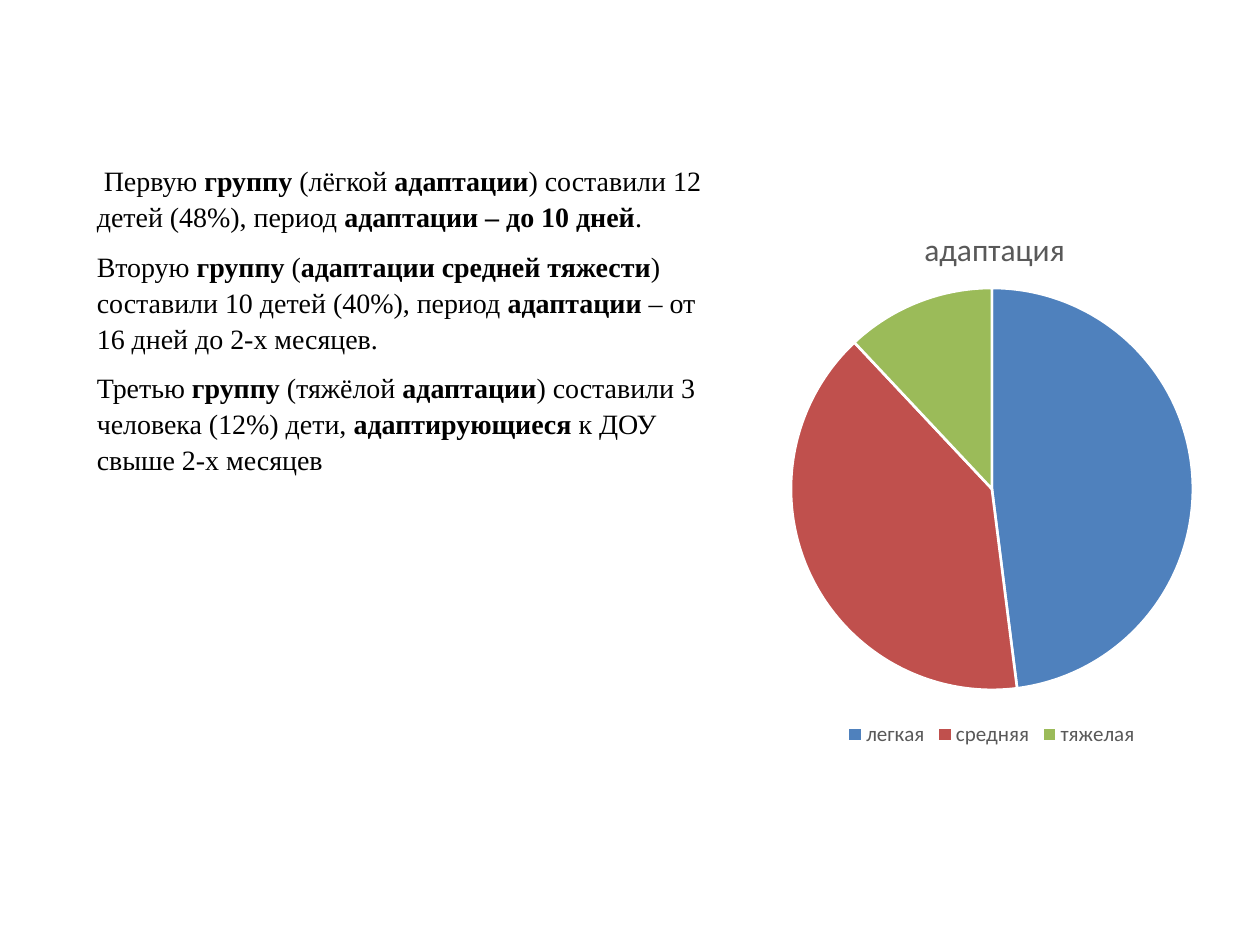
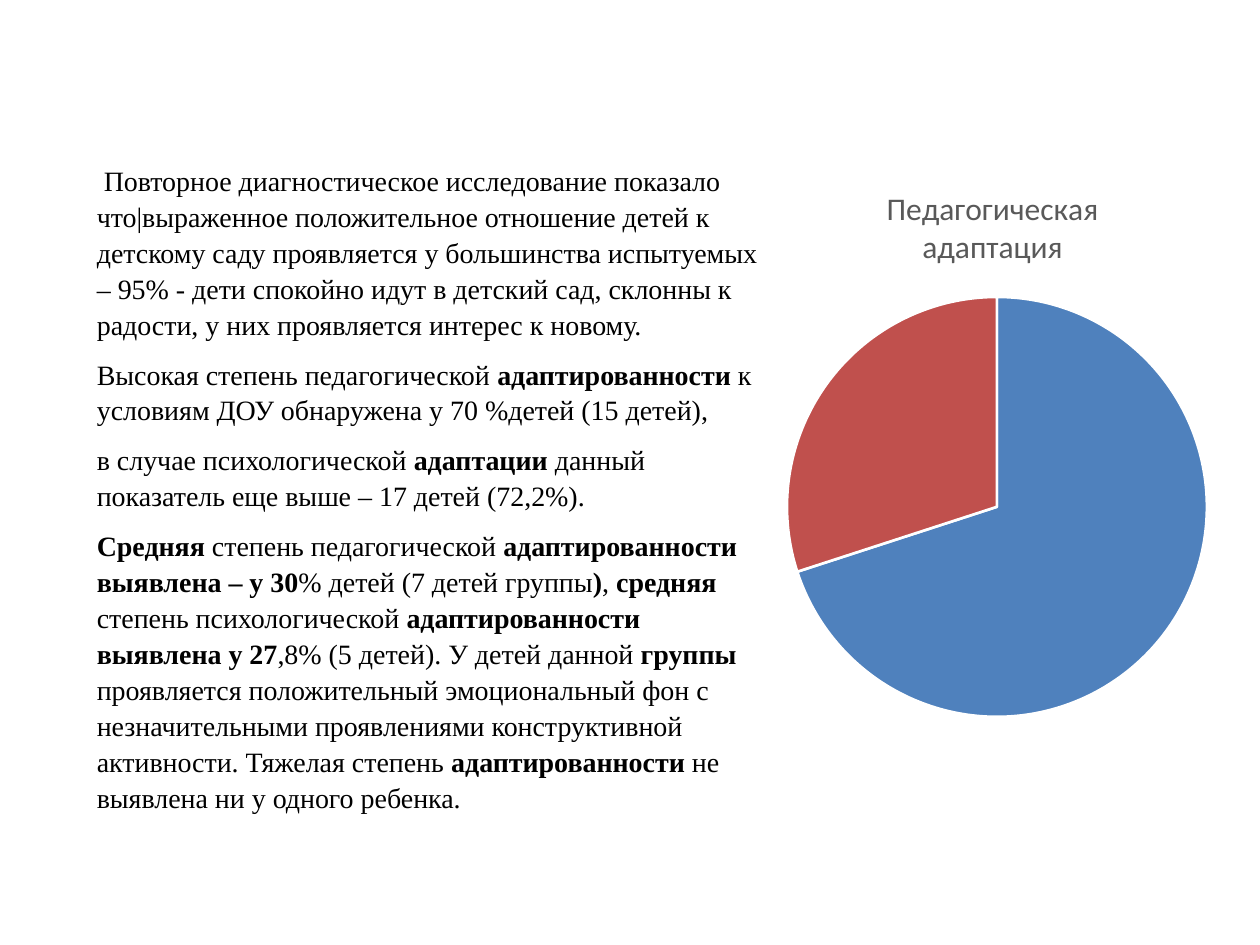
"""Build two slides on how children adapt to kindergarten, each with text and a pie chart."""
from lxml import etree
from pptx import Presentation
from pptx import util as u
from pptx.chart.data import CategoryChartData
from pptx.dml.color import RGBColor
from pptx.enum import chart as charts, text
from pptx.oxml.ns import qn


def colour(hex_value):
    return RGBColor.from_string(hex_value)


class Deck:
    BODY_FONT = "Times New Roman"
    CHART_FONT = "Calibri"
    BLACK, GREY, WHITE = "000000", "595959", "FFFFFF"
    SLICES = ("4F81BD", "C0504D", "9BBB59")
    LEFT, TOP = 48.24, 88.56
    CHART_LEFT = 439.2

    def __init__(self):
        self.presentation = Presentation()
        self.presentation.slide_width = u.Pt(720)
        self.presentation.slide_height = u.Pt(540)
        self.slide = None

    def add_slide(self):
        self.slide = self.presentation.slides.add_slide(self.presentation.slide_layouts[6])

    def font(self, font, name, size, hex_value, bold=False):
        font.name, font.size, font.bold = name, u.Pt(size), bold
        font.color.rgb = colour(hex_value)

    def body(self, width, height, paragraphs):
        box = self.slide.shapes.add_textbox(
            u.Pt(self.LEFT), u.Pt(self.TOP), u.Pt(width), u.Pt(height))
        frame = box.text_frame
        frame.word_wrap = True
        frame.auto_size = text.MSO_AUTO_SIZE.SHAPE_TO_FIT_TEXT
        for index, marked_text in enumerate(paragraphs):
            paragraph = frame.add_paragraph() if index else frame.paragraphs[0]
            paragraph.line_spacing = 1.07
            paragraph.space_after = u.Pt(8)
            for position, part in enumerate(marked_text.split("**")):
                if part:
                    run = paragraph.add_run()
                    run.text = part
                    self.font(run.font, self.BODY_FONT, 16, self.BLACK, position % 2 == 1)

    def place(self, element, index, **settings):
        for old in element.findall(qn("c:layout")):
            element.remove(old)
        layout = etree.Element(qn("c:layout"))
        manual = etree.SubElement(layout, qn("c:manualLayout"))
        for tag, value in settings.items():
            etree.SubElement(manual, qn("c:" + tag)).set("val", str(value))
        element.insert(index, layout)

    def pie(self, top, width, height, title, title_at, pie_at, diameter, values, legend=False):
        data = CategoryChartData()
        data.categories = list(values)
        data.add_series("Series 1", list(values.values()))
        chart = self.slide.shapes.add_chart(
            charts.XL_CHART_TYPE.PIE, u.Pt(self.CHART_LEFT), u.Pt(top),
            u.Pt(width), u.Pt(height), data).chart
        self.font(chart.font, self.CHART_FONT, 10, self.BLACK)

        def share(point):
            return {"x": round((point[0] - self.CHART_LEFT) / width, 4),
                    "y": round((point[1] - top) / height, 4)}

        chart.has_title = True
        chart.chart_title.text_frame.text = title
        for paragraph in chart.chart_title.text_frame.paragraphs:
            paragraph.alignment = text.PP_ALIGN.CENTER
            self.font(paragraph.runs[0].font, self.CHART_FONT, 18, self.GREY)
        self.place(chart.chart_title.element, 1, xMode="edge", yMode="edge", **share(title_at))
        self.place(chart.element.xpath("c:chart/c:plotArea")[0], 0,
                   layoutTarget="inner", xMode="edge", yMode="edge", **share(pie_at),
                   w=round(diameter / width, 4), h=round(diameter / height, 4))

        chart.has_legend = legend
        if legend:
            chart.legend.position = charts.XL_LEGEND_POSITION.BOTTOM
            chart.legend.include_in_layout = False
            self.font(chart.legend.font, self.CHART_FONT, 12, self.GREY)

        plot = chart.plots[0]
        plot.vary_by_categories = True
        for index, hex_value in enumerate(self.SLICES):
            slice_format = plot.series[0].points[index].format
            slice_format.fill.solid()
            slice_format.fill.fore_color.rgb = colour(hex_value)
            slice_format.line.color.rgb = colour(self.WHITE)
            slice_format.line.width = u.Pt(1.5)


def main():
    deck = Deck()

    deck.add_slide()
    deck.body(368.64, 211.68, [
        " Первую **группу **(лёгкой **адаптации**) составили 12 детей (48%), "
        "период **адаптации – до 10 дней**.",
        "Вторую **группу **(**адаптации средней тяжести**) составили 10 детей (40%), "
        "период **адаптации** – от 16 дней до 2-х месяцев.",
        "Третью **группу **(тяжёлой **адаптации**) составили 3 человека (12%) дети, "
        "**адаптирующиеся** к ДОУ свыше 2-х месяцев",
    ])
    deck.pie(110.16, 254.88, 319.68, "адаптация", (525, 127), (452, 164.6), 229.7,
             {"легкая": 48, "средняя": 40, "тяжелая": 12}, legend=True)

    deck.add_slide()
    deck.body(396.72, 383.04, [
        " Повторное диагностическое исследование показало что|выраженное положительное "
        "отношение детей к детскому саду проявляется у большинства испытуемых – 95% - дети "
        "спокойно идут в детский сад, склонны к радости, у них проявляется интерес к новому.",
        "Высокая степень педагогической **адаптированности** к условиям ДОУ обнаружена "
        "у 70 %детей (15 детей),",
        "в случае психологической **адаптации** данный показатель еще выше – "
        "17 детей (72,2%).",
        "**Средняя** степень педагогической **адаптированности выявлена – у 30**% детей "
        "(7 детей группы**)**, **средняя** степень психологической **адаптированности "
        "выявлена у 27**,8% (5 детей). У детей данной **группы** проявляется положительный "
        "эмоциональный фон с незначительными проявлениями конструктивной активности. "
        "Тяжелая степень **адаптированности** не выявлена ни у одного ребенка.",
    ])
    deck.pie(88.56, 260.64, 334.8, "Педагогическая\nадаптация", (504.5, 105), (449.7, 169.7), 240,
             {"1": 70, "2": 30, "3": 0})

    deck.presentation.save("out.pptx")


if __name__ == "__main__":
    main()
